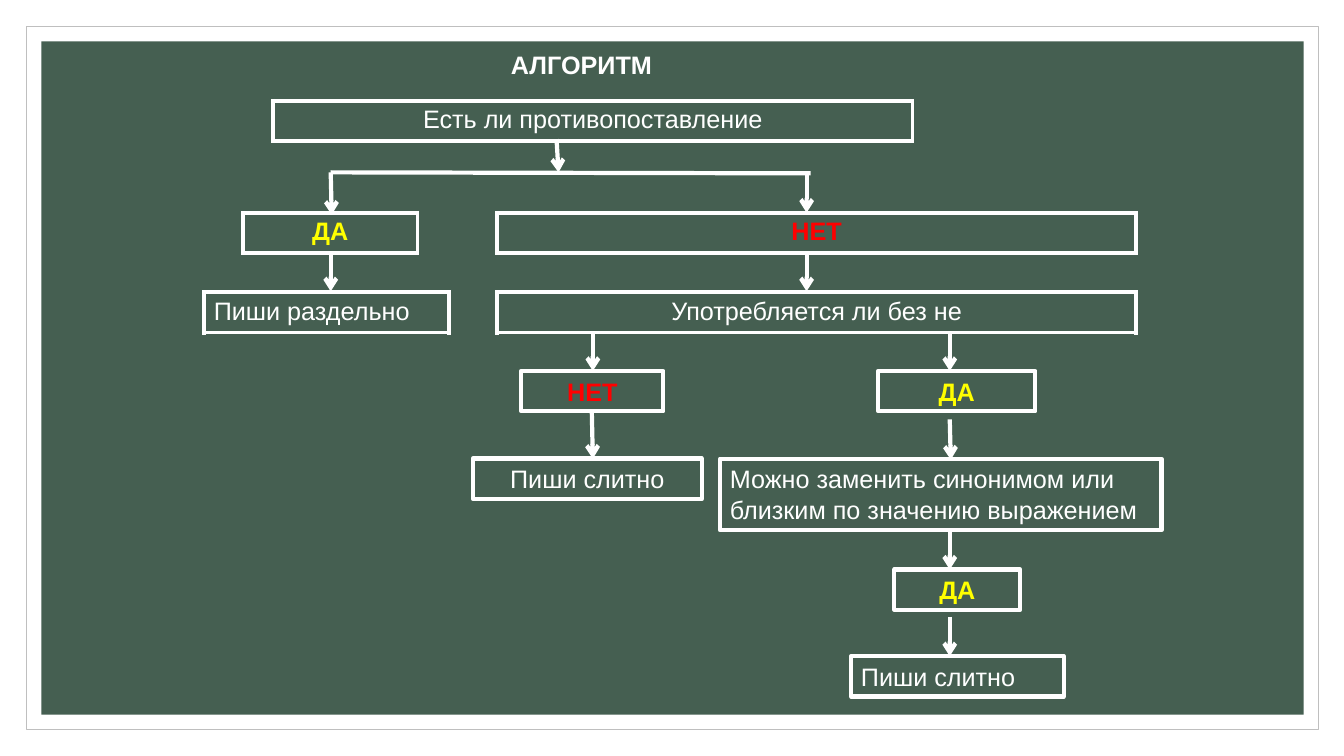
"""Build a one-slide flowchart of a Russian spelling algorithm."""
import lxml.etree
import pptx
import pptx.dml.color
import pptx.enum.shapes
import pptx.enum.text
import pptx.oxml
import pptx.oxml.ns
import pptx.util
from pptx.util import Inches

THEME = {
    "font": "Arial", "size": 18, "line": 3, "frame_line": 0.5,
    "white": "FFFFFF", "board": "455F51", "frame": "BFBFBF",
    "yes": "FFFF00", "no": "FF0000",
}
ROW_HEIGHT = 0.4
TITLE = ("АЛГОРИТМ", 4.97, 0.44, 6.06)

PANELS = [
    ((0.26, 0.26, 12.82, 6.98), "white", "frame"),
    ((0.41, 0.41, 12.52, 6.68), "board", None),
]

TABLES = [
    ("Есть ли противопоставление", 2.71, 1.0, 6.34, "white", "center"),
    ("ДА", 2.41, 2.11, 1.73, "yes", "center"),
    ("НЕТ", 4.93, 2.11, 6.34, "no", "center"),
    ("Пиши раздельно", 2.02, 2.9, 2.43, "white", "left"),
    ("Употребляется ли без не", 4.93, 2.9, 6.34, "white", "center"),
]

BOXES = [
    ("НЕТ", 5.17, 3.68, 1.41, "no", "center"),
    ("ДА", 8.71, 3.68, 1.56, "yes", "center"),
    ("Пиши слитно", 4.69, 4.55, 2.27, "white", "center"),
    ("Можно заменить синонимом или\nблизким по значению выражением",
     7.14, 4.55, 4.38, "white", "left"),
    ("ДА", 8.87, 5.65, 1.25, "yes", "center"),
    ("Пиши слитно", 8.44, 6.51, 2.11, "white", "left"),
]

BRANCH = (3.28, 1.71, 8.04, 1.72)
ARROWS = [
    (5.52, 1.38, 5.54, 1.71),
    (3.28, 1.71, 3.29, 2.13),
    (8.0, 1.71, 8.0, 2.11),
    (3.28, 2.5, 3.28, 2.89),
    (8.0, 2.5, 8.0, 2.89),
    (5.88, 3.29, 5.88, 3.68),
    (9.42, 3.29, 9.42, 3.68),
    (5.87, 4.09, 5.88, 4.55),
    (9.42, 4.16, 9.43, 4.56),
    (9.42, 5.26, 9.42, 5.65),
    (9.42, 6.12, 9.42, 6.51),
]


def color(name):
    return pptx.dml.color.RGBColor.from_string(THEME[name])


def inches(lengths):
    return [Inches(length) for length in lengths]


def add_child(parent, tag, **attributes):
    return lxml.etree.SubElement(parent, pptx.oxml.ns.qn(tag), attributes)


def write(frame, text, color_name, alignment, bold):
    frame.text = text
    for paragraph in frame.paragraphs:
        paragraph.alignment = getattr(pptx.enum.text.PP_ALIGN, alignment.upper())
        paragraph.font.name = THEME["font"]
        paragraph.font.size = pptx.util.Pt(THEME["size"])
        paragraph.font.bold = bold
        paragraph.font.color.rgb = color(color_name)


def add_rectangle(slide, bounds, fill_name, line_name, line_width):
    shape = slide.shapes.add_shape(
        pptx.enum.shapes.MSO_SHAPE.RECTANGLE, *inches(bounds))
    shape.shadow.inherit = False
    if fill_name:
        shape.fill.solid()
        shape.fill.fore_color.rgb = color(fill_name)
    else:
        shape.fill.background()
    if line_name:
        shape.line.color.rgb = color(line_name)
        shape.line.width = pptx.util.Pt(line_width)
    else:
        shape.line.fill.background()
    return shape


def add_table(slide, text, left, top, width, color_name, alignment):
    table = slide.shapes.add_table(
        1, 1, *inches((left, top, width, ROW_HEIGHT))).table
    table.first_row = False
    table.horz_banding = False
    cell = table.cell(0, 0)
    write(cell.text_frame, text, color_name, alignment, color_name != "white")
    properties = cell._tc.get_or_add_tcPr()
    for tag in ("a:lnL", "a:lnR", "a:lnT", "a:lnB"):
        border = add_child(properties, tag, w=str(pptx.util.Pt(THEME["line"])))
        add_child(add_child(border, "a:solidFill"), "a:srgbClr", val=THEME["white"])
    cell.fill.background()


def add_box(slide, text, left, top, width, color_name, alignment):
    height = ROW_HEIGHT + 0.31 * text.count("\n")
    shape = add_rectangle(
        slide, (left, top, width, height), None, "white", THEME["line"])
    frame = shape.text_frame
    frame.word_wrap = True
    frame.auto_size = pptx.enum.text.MSO_AUTO_SIZE.SHAPE_TO_FIT_TEXT
    frame.vertical_anchor = pptx.enum.text.MSO_ANCHOR.TOP
    write(frame, text, color_name, alignment, color_name != "white")


def add_line(slide, ends, arrowhead):
    connector = slide.shapes.add_connector(
        pptx.enum.shapes.MSO_CONNECTOR.STRAIGHT, *inches(ends))
    connector.line.color.rgb = color("white")
    connector.line.width = pptx.util.Pt(THEME["line"])
    if arrowhead:
        add_child(connector.line._get_or_add_ln(), "a:tailEnd", type="arrow")
    add_child(connector._element.spPr, "a:effectLst")


def add_title(slide, text, left, top, width):
    title = slide.shapes.add_textbox(*inches((left, top, width, ROW_HEIGHT)))
    title.text_frame.word_wrap = True
    title.text_frame.auto_size = pptx.enum.text.MSO_AUTO_SIZE.SHAPE_TO_FIT_TEXT
    write(title.text_frame, text, "white", "left", True)


def main():
    presentation = pptx.Presentation()
    presentation.slide_width = Inches(13.33)
    presentation.slide_height = Inches(7.5)
    slide = presentation.slides.add_slide(presentation.slide_layouts[6])
    for bounds, fill_name, line_name in PANELS:
        add_rectangle(slide, bounds, fill_name, line_name, THEME["frame_line"])
    for table in TABLES:
        add_table(slide, *table)
    for box in BOXES:
        add_box(slide, *box)
    add_line(slide, BRANCH, False)
    for arrow in ARROWS:
        add_line(slide, arrow, True)
    add_title(slide, *TITLE)
    presentation.save("out.pptx")


if __name__ == "__main__":
    main()
